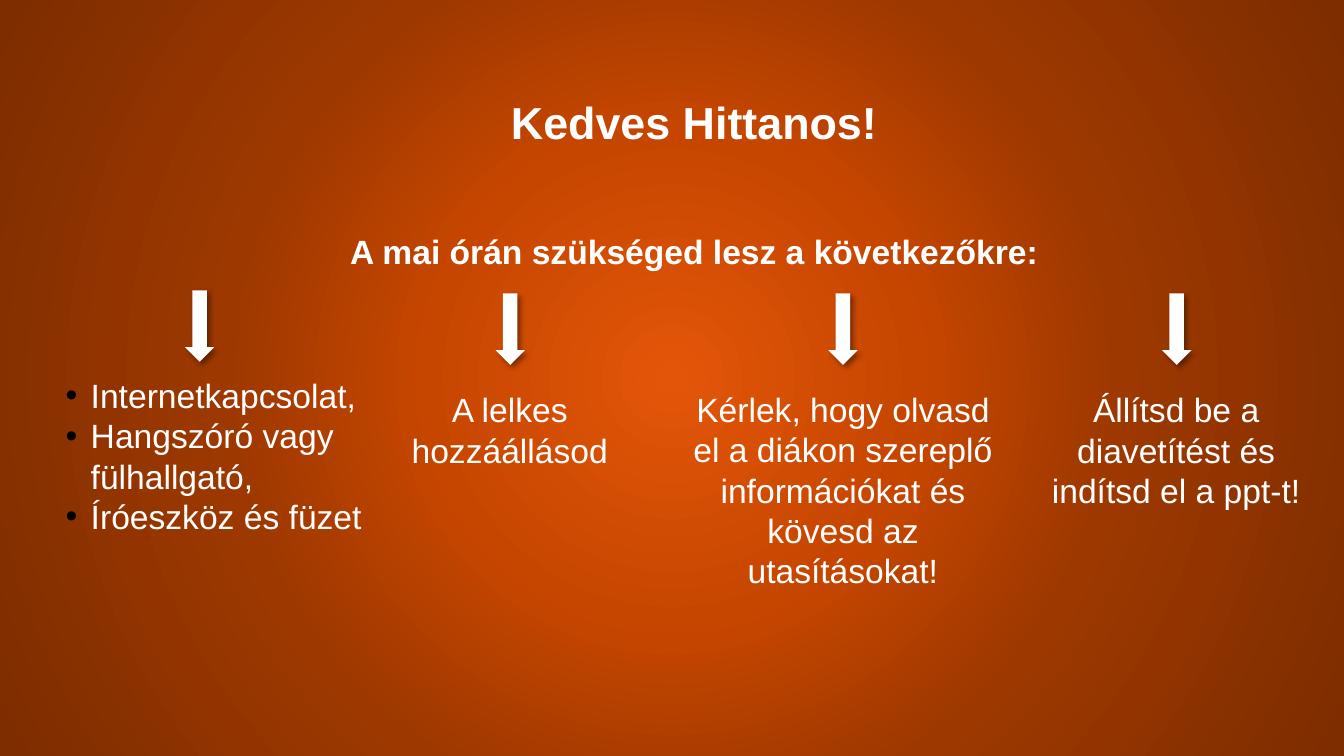
from dataclasses import dataclass

from lxml import etree
from pptx import Presentation, util as u
from pptx.dml.color import RGBColor
from pptx.enum import shapes, text
from pptx.oxml import parse_xml
from pptx.oxml.ns import nsdecls, qn


@dataclass(frozen=True)
class Theme:
    """Colours, font and type sizes of the slide."""
    font: str = "Arial"
    ink: str = "FFFFFF"
    bullet: str = "000000"
    shadow: str = "000000"
    glow: tuple = ((0, "E35609"), (32, "C64600"), (58, "9D3800"), (99, "7E2D00"))
    title: int = 32
    body: int = 24


@dataclass(frozen=True)
class Requirement:
    """One thing the lesson needs: its text box and the arrow above it."""
    lines: tuple
    box: tuple
    arrow_center: float
    arrow_top: float = 2.91
    bulleted: bool = False


THEME = Theme()
ARROW_WIDTH, ARROW_HEIGHT = 0.29, 0.71
BULLET_INDENT = 0.25
REQUIREMENTS = (
    Requirement(("Internetkapcsolat,", "Hangszóró vagy fülhallgató,", "Íróeszköz és füzet"),
                (0.65, 3.72, 3.18, 1.71), 1.98, arrow_top=2.88, bulleted=True),
    Requirement(("A lelkes hozzáállásod",), (3.7, 3.86, 2.71, 1.25), 5.06),
    Requirement(("Kérlek, hogy olvasd el a diákon szereplő információkat és kövesd az utasításokat!",),
                (6.77, 3.86, 3.18, 3.27), 8.36),
    Requirement(("Állítsd be a diavetítést és indítsd el a ppt-t!",), (10.31, 3.86, 2.71, 1.25), 11.67),
)


def paint_background(slide):
    """Fill the slide with a glow that darkens from the centre outwards."""
    slide.background.fill.gradient()
    gradient = slide.element.xpath("./p:cSld/p:bg//a:gradFill")[0]
    stops = "".join(f'<a:gs pos="{pos * 1000}"><a:srgbClr val="{color}"/></a:gs>'
                    for pos, color in THEME.glow)
    glow = parse_xml(
        f'<a:gradFill {nsdecls("a")} rotWithShape="1"><a:gsLst>{stops}</a:gsLst>'
        '<a:path path="circle"><a:fillToRect l="50000" t="50000" r="50000" b="50000"/></a:path>'
        '</a:gradFill>')
    gradient.getparent().replace(gradient, glow)


def add_text(slide, box, lines, size, bold=False, align=text.PP_ALIGN.CENTER):
    """Place paragraphs in a box without margins and return its frame."""
    frame = slide.shapes.add_textbox(*map(u.Inches, box)).text_frame
    frame.word_wrap = True
    frame.margin_left = frame.margin_top = frame.margin_right = frame.margin_bottom = 0
    frame.text = "\n".join(lines)
    for paragraph in frame.paragraphs:
        paragraph.alignment = align
        for run in paragraph.runs:
            run.font.name, run.font.size, run.font.bold = THEME.font, u.Pt(size), bold
            run.font.color.rgb = RGBColor.from_string(THEME.ink)
    return frame


def add_bullet(paragraph):
    """Give a paragraph a hanging round bullet."""
    properties = paragraph._p.get_or_add_pPr()
    indent = u.Inches(BULLET_INDENT)
    properties.set("marL", str(indent))
    properties.set("indent", str(-indent))
    color = etree.SubElement(properties, qn("a:buClr"))
    etree.SubElement(color, qn("a:srgbClr"), val=THEME.bullet)
    etree.SubElement(properties, qn("a:buFont"), typeface=THEME.font)
    etree.SubElement(properties, qn("a:buChar"), char="•")


def add_down_arrow(slide, center, top):
    """Draw a shadowed down arrow centred on a column."""
    arrow = slide.shapes.add_shape(
        shapes.MSO_SHAPE.DOWN_ARROW, u.Inches(center - ARROW_WIDTH / 2), u.Inches(top),
        u.Inches(ARROW_WIDTH), u.Inches(ARROW_HEIGHT))
    arrow.fill.solid()
    arrow.fill.fore_color.rgb = RGBColor.from_string(THEME.ink)
    arrow.line.fill.background()
    arrow.shadow.inherit = False
    effects = arrow.element.spPr.find(qn("a:effectLst"))
    effects.append(parse_xml(
        f'<a:outerShdw {nsdecls("a")} blurRad="{u.Pt(4)}" dist="{u.Pt(3)}" dir="{45 * 60000}" '
        f'algn="tl" rotWithShape="0"><a:srgbClr val="{THEME.shadow}">'
        '<a:alpha val="40000"/></a:srgbClr></a:outerShdw>'))


def add_heading(slide, box):
    """Write the greeting and, below it, the line that leads to the columns."""
    left, top, width, height = box
    add_text(slide, (left, top, width, 0.71), ("Kedves Hittanos!",), THEME.title, bold=True)
    lead_height = 0.4
    add_text(slide, (left, top + height - lead_height, width, lead_height),
             ("A mai órán szükséged lesz a következőkre:",), THEME.body, bold=True)


def add_requirement(slide, requirement):
    """Write one requirement under its arrow."""
    align = text.PP_ALIGN.LEFT if requirement.bulleted else text.PP_ALIGN.CENTER
    frame = add_text(slide, requirement.box, requirement.lines, THEME.body, align=align)
    if requirement.bulleted:
        for paragraph in frame.paragraphs:
            add_bullet(paragraph)
    add_down_arrow(slide, requirement.arrow_center, requirement.arrow_top)


def main():
    """Build the slide and save it."""
    deck = Presentation()
    deck.slide_width, deck.slide_height = u.Inches(13.33), u.Inches(7.5)
    slide = deck.slides.add_slide(deck.slide_layouts[6])
    paint_background(slide)
    add_heading(slide, (1.83, 0.94, 10.11, 1.75))
    for requirement in REQUIREMENTS:
        add_requirement(slide, requirement)
    deck.save("out.pptx")


if __name__ == "__main__":
    main()
